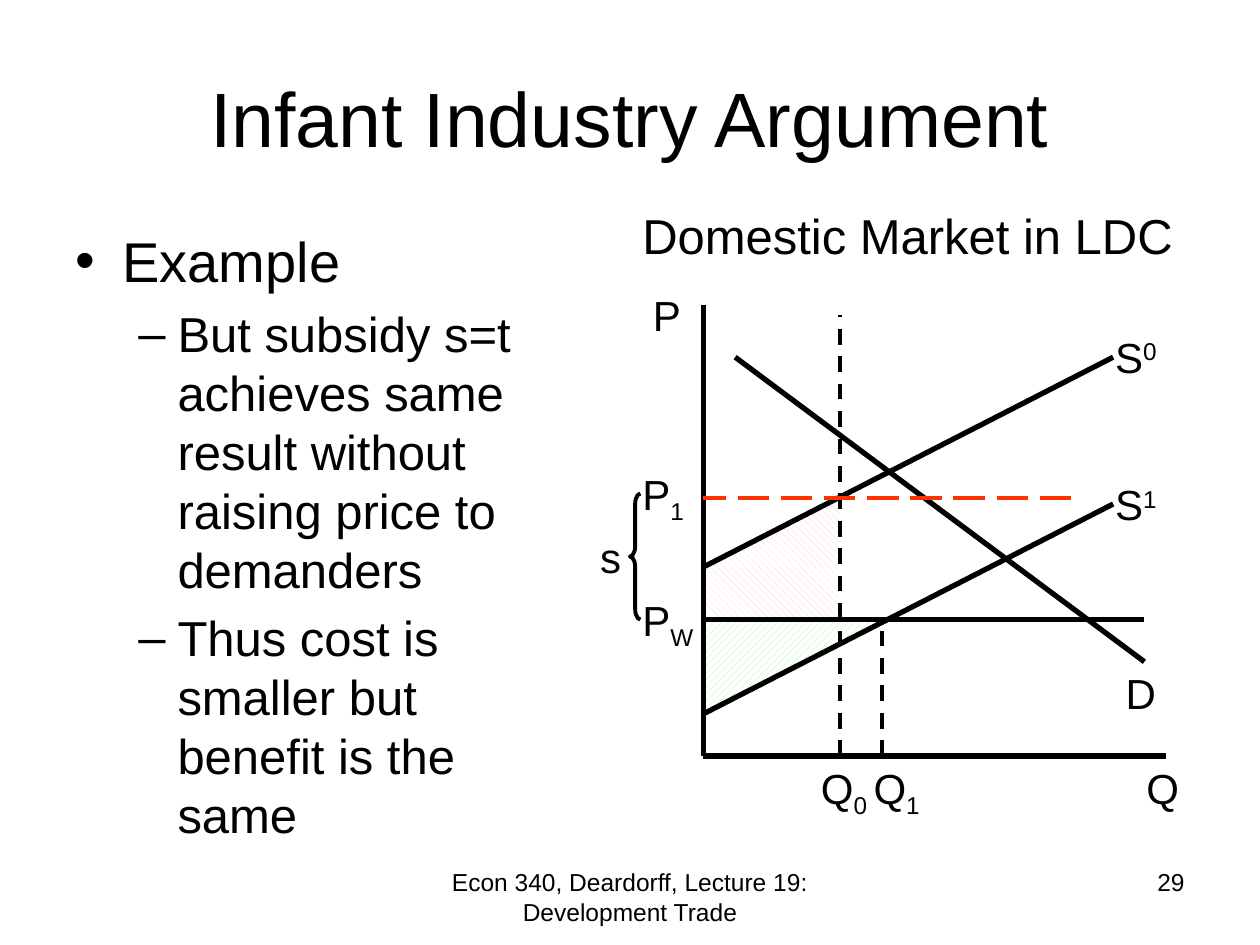
from dataclasses import dataclass
from typing import Optional

import pptx
import pptx.util
from lxml import etree
from pptx.dml.color import RGBColor
from pptx.enum.dml import MSO_LINE, MSO_PATTERN
from pptx.enum.shapes import MSO_CONNECTOR, MSO_SHAPE
from pptx.enum.text import MSO_ANCHOR, PP_ALIGN
from pptx.oxml.ns import qn
from pptx.util import Cm, Pt

FONT = "Arial"
BLACK, RED, GREEN, PINK, WHITE = "000000", "FF3300", "99FF99", "FFCCCC", "FFFFFF"

# Key positions of the market diagram, in cm
AXIS_X, AXIS_Y = 14.18, 15.24
Q0_X, Q1_X = 16.93, 17.78
SUPPLY_END_X, WORLD_END_X = 22.44, 23.07
TARIFF_Y, WORLD_Y = 10.03, 12.49
SHADE_TOP = 9.95
S0_FOOT, S0_END = 11.43, 7.2
S1_FOOT, S1_END = 14.39, 10.16


@dataclass
class Area:
    preset: MSO_SHAPE
    top: float
    right: float
    bottom: float
    pattern: MSO_PATTERN
    color: str
    flip: str = ""


@dataclass
class Segment:
    x1: float
    y1: float
    x2: float
    y2: float
    width: float = 3
    color: str = BLACK
    dash: Optional[MSO_LINE] = None


@dataclass
class Label:
    left: float
    top: float
    width: float
    letter: str
    index: str = ""
    baseline: int = -25000


@dataclass
class Point:
    text: str
    size: int
    bullet: str
    margin: float
    hanging: float
    level: int = 0
    before: float = 0


AREAS = [
    Area(MSO_SHAPE.RIGHT_TRIANGLE, WORLD_Y, Q1_X, S1_FOOT,
         MSO_PATTERN.WIDE_UPWARD_DIAGONAL, GREEN, "flipV"),
    Area(MSO_SHAPE.RECTANGLE, S0_FOOT, Q0_X, WORLD_Y,
         MSO_PATTERN.WIDE_DOWNWARD_DIAGONAL, PINK),
    Area(MSO_SHAPE.RIGHT_TRIANGLE, SHADE_TOP, Q0_X, S0_FOOT,
         MSO_PATTERN.WIDE_DOWNWARD_DIAGONAL, PINK, "flipH"),
]
SEGMENTS = [
    Segment(AXIS_X, 6.14, AXIS_X, AXIS_Y),
    Segment(23.5, AXIS_Y, AXIS_X, AXIS_Y),
    Segment(WORLD_END_X, WORLD_Y, AXIS_X, WORLD_Y),
    Segment(SUPPLY_END_X, S1_END, AXIS_X, S1_FOOT),
    Segment(SUPPLY_END_X, S0_END, AXIS_X, S0_FOOT),
    Segment(WORLD_END_X, 13.34, 14.82, S0_END),
    Segment(Q0_X, AXIS_Y, Q0_X, 6.35, 2.25, BLACK, MSO_LINE.DASH),
    Segment(21.59, TARIFF_Y, AXIS_X, TARIFF_Y, 2.25, RED, MSO_LINE.LONG_DASH),
    Segment(Q1_X, AXIS_Y, Q1_X, WORLD_Y, 2.25, BLACK, MSO_LINE.DASH),
]
LABELS = [
    Label(12.91, 5.72, 1.7, "P"),
    Label(12.7, 9.31, 1.7, "P", "1"),
    Label(12.7, 11.85, 1.7, "P", "W"),
    Label(11.85, 10.58, 1.27, "s"),
    Label(22.23, 6.56, 1.48, "S", "0", 30000),
    Label(22.23, 9.53, 1.48, "S", "1", 30000),
    Label(22.44, 13.34, 1.27, "D"),
    Label(16.3, AXIS_Y, 1.7, "Q", "0"),
    Label(17.36, AXIS_Y, 1.7, "Q", "1"),
    Label(22.86, AXIS_Y, 1.27, "Q"),
]
POINTS = [
    Point("Example", 32, "•", 0.95, 0.95),
    Point("But subsidy s=t achieves same result without raising price to demanders",
          28, "–", 2.06, 0.79, 1, 5.6),
    Point("Thus cost is smaller but benefit is the same", 28, "–", 2.06, 0.79, 1, 5.6),
]


def rgb(color: str) -> RGBColor:
    return RGBColor.from_string(color)


def set_font(paragraph, size: float) -> None:
    paragraph.font.name = FONT
    paragraph.font.size = Pt(size)
    paragraph.font.color.rgb = rgb(BLACK)


def add_frame(shapes, left: float, top: float, width: float, height: float):
    """Add a wrapping text box and return its text frame."""
    frame = shapes.add_textbox(Cm(left), Cm(top), Cm(width), Cm(height)).text_frame
    frame.word_wrap = True
    return frame


def add_text(shapes, left: float, top: float, width: float, height: float,
             text: str, size: float, align=PP_ALIGN.LEFT, anchor=MSO_ANCHOR.TOP) -> None:
    frame = add_frame(shapes, left, top, width, height)
    frame.vertical_anchor = anchor
    paragraph = frame.paragraphs[0]
    paragraph.text = text
    paragraph.alignment = align
    set_font(paragraph, size)


def add_points(shapes, points: list[Point]) -> None:
    frame = add_frame(shapes, 1.27, 4.45, 10.37, 12.57)
    for number, point in enumerate(points):
        paragraph = frame.add_paragraph() if number else frame.paragraphs[0]
        paragraph.text = point.text
        paragraph.level = point.level
        paragraph.space_before = Pt(point.before)
        properties = paragraph._p.get_or_add_pPr()
        properties.set("marL", str(Cm(point.margin)))
        properties.set("indent", str(-Cm(point.hanging)))
        etree.SubElement(properties, qn("a:buFont")).set("typeface", FONT)
        etree.SubElement(properties, qn("a:buChar")).set("char", point.bullet)
        set_font(paragraph, point.size)


def add_area(shapes, area: Area) -> None:
    """Add a hatched area that starts at the price axis."""
    shape = shapes.add_shape(area.preset, Cm(AXIS_X), Cm(area.top),
                             Cm(area.right - AXIS_X), Cm(area.bottom - area.top))
    shape.shadow.inherit = False
    shape.fill.patterned()
    shape.fill.pattern = area.pattern
    shape.fill.fore_color.rgb = rgb(area.color)
    shape.fill.back_color.rgb = rgb(WHITE)
    shape.line.fill.background()
    if area.flip:
        shape._element.spPr.xfrm.set(area.flip, "1")


def add_segment(shapes, segment: Segment) -> None:
    connector = shapes.add_connector(MSO_CONNECTOR.STRAIGHT, Cm(segment.x1), Cm(segment.y1),
                                     Cm(segment.x2), Cm(segment.y2))
    connector.line.color.rgb = rgb(segment.color)
    connector.line.width = Pt(segment.width)
    if segment.dash:
        connector.line.dash_style = segment.dash
    etree.SubElement(connector._element.spPr, qn("a:effectLst"))


def add_label(shapes, label: Label) -> None:
    paragraph = add_frame(shapes, label.left, label.top, label.width, 1.27).paragraphs[0]
    set_font(paragraph, 24)
    paragraph.add_run().text = label.letter
    if label.index:
        index = paragraph.add_run()
        index.text = label.index
        index.font._element.set("baseline", str(label.baseline))


def add_subsidy_brace(shapes) -> None:
    brace = shapes.add_shape(MSO_SHAPE.LEFT_BRACE, Cm(12.7), Cm(SHADE_TOP),
                             Cm(0.21), Cm(WORLD_Y - SHADE_TOP))
    brace.adjustments[0] = 1
    brace.adjustments[1] = 0.5
    brace.shadow.inherit = False
    brace.fill.background()
    brace.line.color.rgb = rgb(BLACK)
    brace.line.width = Pt(2.25)


def main() -> None:
    presentation = pptx.Presentation()
    presentation.slide_width, presentation.slide_height = Cm(25.4), Cm(19.05)
    shapes = presentation.slides.add_slide(presentation.slide_layouts[6]).shapes

    add_text(shapes, 8.68, 17.36, 8.04, 1.32,
             "Econ 340, Deardorff, Lecture 19: Development Trade", 14, PP_ALIGN.CENTER)
    add_text(shapes, 18.2, 17.36, 5.93, 1.32, "29", 14, PP_ALIGN.RIGHT)
    for area in AREAS:
        add_area(shapes, area)
    add_text(shapes, 1.27, 0.76, 22.86, 3.18, "Infant Industry Argument", 44,
             PP_ALIGN.CENTER, MSO_ANCHOR.MIDDLE)
    add_points(shapes, POINTS)
    for segment in SEGMENTS:
        add_segment(shapes, segment)
    add_subsidy_brace(shapes)
    for label in LABELS:
        add_label(shapes, label)
    add_text(shapes, 12.7, 4.02, 11.43, 1.45, "Domestic Market in LDC", 28)
    presentation.save("out.pptx")


if __name__ == "__main__":
    main()
